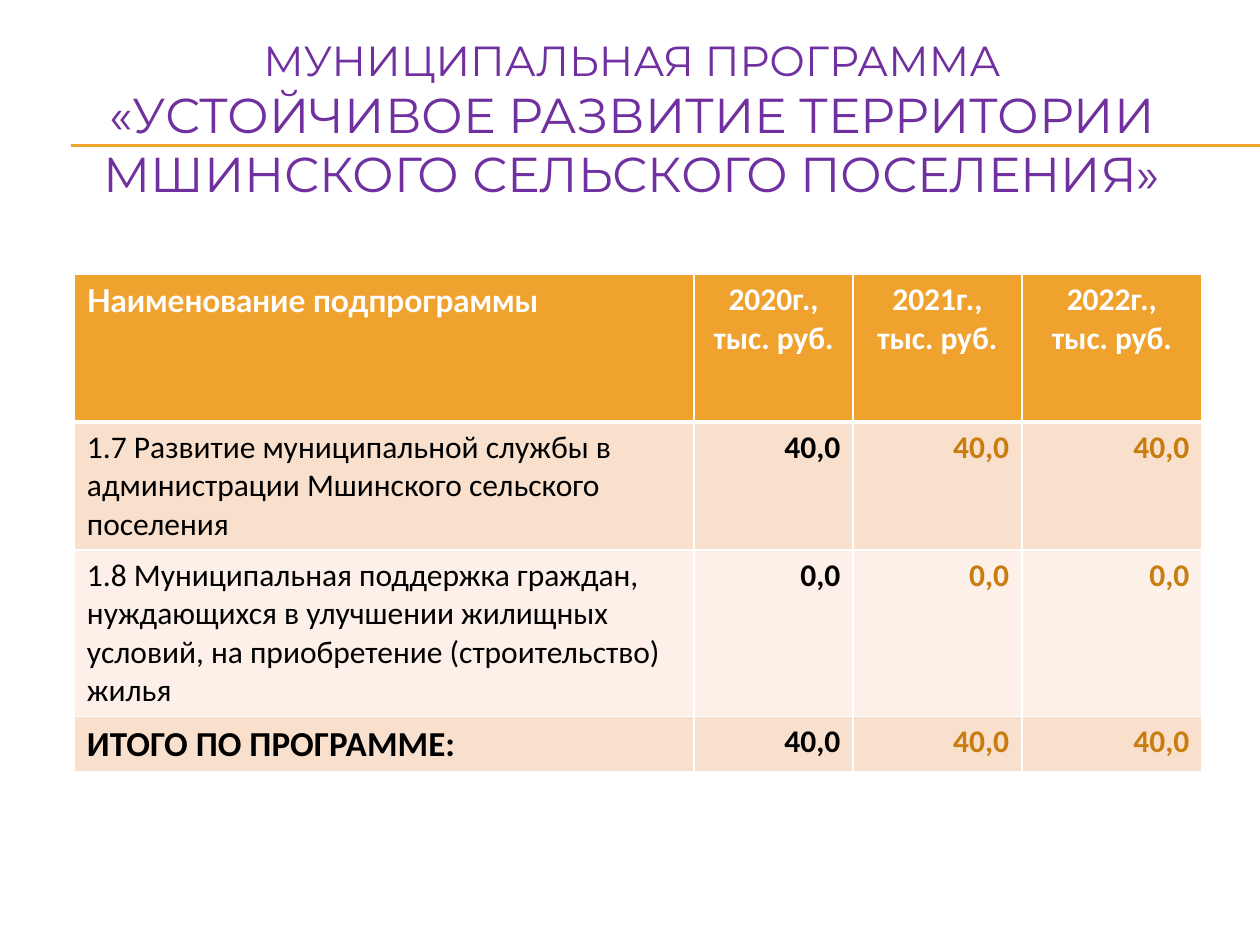
from lxml import etree
from pptx import Presentation
from pptx.dml.color import RGBColor
from pptx.enum.shapes import MSO_CONNECTOR
from pptx.enum.text import MSO_ANCHOR, MSO_AUTO_SIZE, PP_ALIGN
from pptx.oxml.ns import qn
from pptx.util import Inches, Pt

STRAIGHT = MSO_CONNECTOR.STRAIGHT
MIDDLE = MSO_ANCHOR.MIDDLE
NO_FIT = MSO_AUTO_SIZE.NONE
LEFT, CENTER, RIGHT = PP_ALIGN.LEFT, PP_ALIGN.CENTER, PP_ALIGN.RIGHT

WHITE = RGBColor(0xFF, 0xFF, 0xFF)
BLACK = RGBColor(0, 0, 0)
PURPLE = RGBColor(0x70, 0x30, 0xA0)
ORANGE = RGBColor(0xF0, 0xA2, 0x2E)
DARK_ORANGE = RGBColor(0xC8, 0x7D, 0x0E)
PEACH = RGBColor(0xF9, 0xE0, 0xCD)
PALE_PEACH = RGBColor(0xFC, 0xF0, 0xE8)

TITLE = [
    ("МУНИЦИПАЛЬНАЯ ПРОГРАММА\v", 24),
    ("«УСТОЙЧИВОЕ РАЗВИТИЕ ТЕРРИТОРИИ МШИНСКОГО СЕЛЬСКОГО ПОСЕЛЕНИЯ»", 28),
]
YEARS = [2020, 2021, 2022]
ROWS = [
    ["Наименование подпрограммы"] + [f"{year}г.,\nтыс. руб." for year in YEARS],
    ["1.7 Развитие муниципальной службы в администрации Мшинского сельского поселения",
     "40,0", "40,0", "40,0"],
    ["1.8 Муниципальная поддержка граждан, нуждающихся в улучшении жилищных условий, "
     "на приобретение (строительство) жилья", "0,0", "0,0", "0,0"],
    ["ИТОГО ПО ПРОГРАММЕ:", "40,0", "40,0", "40,0"],
]
COL_WIDTHS = [4.92, 1.26, 1.34, 1.43]
ROW_HEIGHTS = [1.17, 1.0, 1.3, 0.44]
RULE_TOPS = [1.15, 1.16]


def add_rule(s, top):
    line = s.shapes.add_connector(STRAIGHT, Inches(0.56), Inches(top), Inches(10), Inches(top))
    line.line.color.rgb = ORANGE
    line.line.width = Pt(0.75)
    etree.SubElement(line._element.spPr, qn("a:effectLst"))


def set_borders(cell, widths):
    tcPr = cell._tc.get_or_add_tcPr()
    for i, (side, width) in enumerate(widths.items()):
        ln = etree.Element(qn(f"a:ln{side}"), w=str(Pt(width)))
        fill = etree.SubElement(ln, qn("a:solidFill"))
        etree.SubElement(fill, qn("a:srgbClr"), val=str(WHITE))
        tcPr.insert(i, ln)


def format_cell(cell, row, col):
    header, total = row == 0, row == len(ROWS) - 1
    cell.fill.solid()
    cell.fill.fore_color.rgb = ORANGE if header else PEACH if row % 2 else PALE_PEACH
    set_borders(cell, {"L": 1, "R": 1, "T": 3 if row == 1 else 1, "B": 3 if header else 1})
    for p in cell.text_frame.paragraphs:
        p.alignment = LEFT if col == 0 else CENTER if header else RIGHT
        font = p.runs[0].font
        font.name = "Lato" if header and col == 0 else "Calibri"
        font.size = Pt(20 if total and col == 0 else 18)
        font.bold = header or total or col > 0
        font.color.rgb = WHITE if header else DARK_ORANGE if col > 1 else BLACK


def add_budget_table(s):
    frame = s.shapes.add_table(len(ROWS), len(COL_WIDTHS), Inches(0.59), Inches(2.18),
                               Inches(sum(COL_WIDTHS)), Inches(sum(ROW_HEIGHTS)))
    table = frame.table
    for column, width in zip(table.columns, COL_WIDTHS):
        column.width = Inches(width)
    for row, height in zip(table.rows, ROW_HEIGHTS):
        row.height = Inches(height)
    for i, texts in enumerate(ROWS):
        for j, text in enumerate(texts):
            cell = table.cell(i, j)
            cell.text = text
            format_cell(cell, i, j)


def fill_title(s):
    title = s.shapes.title
    title.left, title.top = Inches(0.35), Inches(0.29)
    title.width, title.height = Inches(9.33), Inches(1.3)
    tf = title.text_frame
    tf.word_wrap = True
    tf.auto_size = NO_FIT
    tf.vertical_anchor = MIDDLE
    p = tf.paragraphs[0]
    p.text = "".join(text for text, size in TITLE)
    p.alignment = CENTER
    for r, (text, size) in zip(p.runs, TITLE):
        r.font.name = "Montserrat"
        r.font.size = Pt(size)
        r.font.color.rgb = PURPLE
    s.shapes._spTree.append(title._element)


def main():
    prs = Presentation()
    prs.slide_width, prs.slide_height = Inches(10), Inches(7.5)
    s = prs.slides.add_slide(prs.slide_layouts[5])
    for top in RULE_TOPS:
        add_rule(s, top)
    add_budget_table(s)
    fill_title(s)
    prs.save("out.pptx")


if __name__ == "__main__":
    main()
